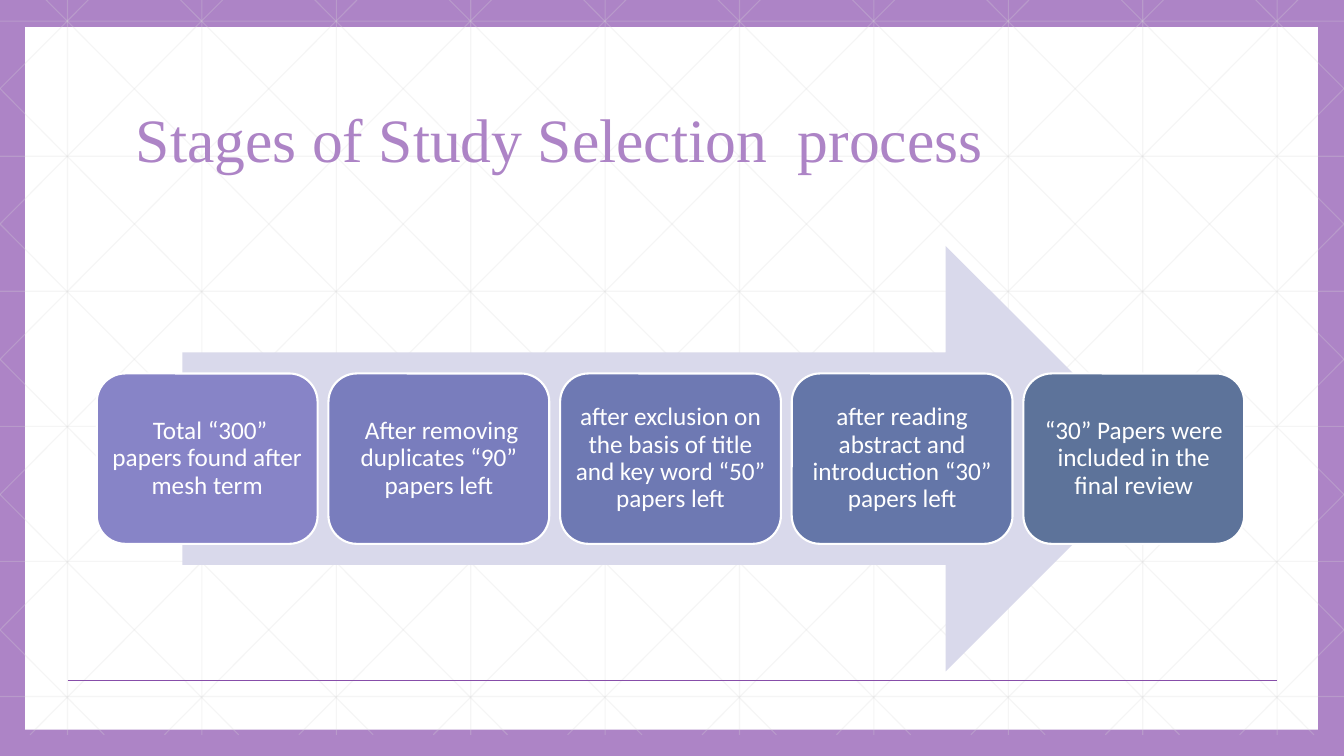
from lxml.etree import SubElement
from pptx import Presentation
from pptx.dml.color import RGBColor
from pptx.enum.shapes import MSO_CONNECTOR, MSO_SHAPE
from pptx.enum.text import MSO_ANCHOR, PP_ALIGN
from pptx.oxml.ns import qn
from pptx.util import Pt

PX = 9144  # 100 px to the inch
WIDTH, HEIGHT = 1333, 750
PURPLE, WHITE = "AD84C6", "FFFFFF"

STAGES = [
    (" Total “300” papers found after mesh term", "8784C7"),
    (" After removing duplicates “90” papers left", "797DBD"),
    ("after exclusion on the basis of title and key word “50” papers left", "6E79B3"),
    ("after reading abstract and introduction “30” papers left", "6476A8"),
    ("“30” Papers were included in the final review", "5D739A"),
]


def emu(*lengths):
    return [round(length * PX) for length in lengths]


def color(hex_string):
    return RGBColor.from_string(hex_string)


def add_block(slide, preset, box, fill, outline=None):
    block = slide.shapes.add_shape(preset, *emu(*box))
    block.shadow.inherit = False
    block.fill.solid()
    block.fill.fore_color.rgb = color(fill)
    if outline:
        block.line.color.rgb = color(outline)
        block.line.width = Pt(1.5)
    else:
        block.line.fill.background()
    return block


def add_rule(slide, start, end, hex_string, weight, opacity=None):
    rule = slide.shapes.add_connector(MSO_CONNECTOR.STRAIGHT, *emu(*start, *end))
    rule.line.color.rgb = color(hex_string)
    rule.line.width = Pt(weight)
    properties = rule._element.spPr
    if opacity:
        tint = properties.find(".//" + qn("a:srgbClr"))
        SubElement(tint, qn("a:alpha"), val=str(opacity * 1000))
    SubElement(properties, qn("a:effectLst"))


def write(holder, text, *, font, size, hex_string, align=PP_ALIGN.LEFT, inset=None):
    frame = holder.text_frame
    frame.word_wrap = True
    frame.vertical_anchor = MSO_ANCHOR.MIDDLE
    if inset is not None:
        (frame.margin_left, frame.margin_top,
         frame.margin_right, frame.margin_bottom) = emu(*[inset] * 4)
    paragraph = frame.paragraphs[0]
    paragraph.alignment = align
    paragraph.line_spacing = 0.9
    run = paragraph.add_run()
    run.text = text
    run.font.name = font
    run.font.size = Pt(size)
    run.font.color.rgb = color(hex_string)


def draw_lattice(slide, box):
    """Faint upright, level and diagonal lines, cut off at the sides of the box."""
    left, top, width, height = box
    right, bottom = left + width, top + height
    step, lean = width / 10, 745

    def faint(start, end):
        add_rule(slide, start, end, "D9D9D9", 0.79, opacity=25)

    for column in range(10):
        x = left + 67 + column * step
        faint((x, top), (x, bottom))
    for row in range(6):
        y = top + 42 + row * 134
        faint((left, y), (right, y))
    for diagonal in range(-5, 10):
        x = left + 25 + diagonal * step
        x1, x2 = max(x, left), min(x + lean, right)
        y1, y2 = [top + (edge - x) * height / lean for edge in (x1, x2)]
        faint((x1, y1), (x2, y2))
        faint((left + right - x1, y1), (left + right - x2, y2))


def draw_background(slide, box):
    left, top, width, height = box
    slide.background.fill.solid()
    slide.background.fill.fore_color.rgb = color(PURPLE)
    # White page inside the purple frame
    add_block(slide, MSO_SHAPE.RECTANGLE,
              (left + 25, top + 27, width - 51, height - 53), WHITE)
    draw_lattice(slide, (left, top - 21, width, height))
    # Footer rule
    add_rule(slide, (left + 67, top + 675), (left + width - 66, top + 675), "874EA9", 1)


def draw_title(slide, box):
    title = slide.shapes.add_textbox(*emu(*box))
    write(title, "Stages of Study Selection  process",
          font="Times New Roman", size=44, hex_string=PURPLE)


def draw_process(slide, box):
    left, top, width, height = box
    # Arrow behind the stages
    add_block(slide, MSO_SHAPE.RIGHT_ARROW, (left + 85, top, width - 170, height), "D9D9EB")
    # Stage cards, equally spaced across the box
    card_width, card_height = 219, 169
    pitch = (width - card_width) / (len(STAGES) - 1)
    card_top = top + (height - card_height) / 2
    for index, (stage, fill) in enumerate(STAGES):
        card = add_block(slide, MSO_SHAPE.ROUNDED_RECTANGLE,
                         (left + index * pitch, card_top, card_width, card_height),
                         fill, outline=WHITE)
        write(card, stage, font="Calibri", size=18, hex_string=WHITE,
              align=PP_ALIGN.CENTER, inset=7)


def main():
    deck = Presentation()
    deck.slide_width, deck.slide_height = emu(WIDTH, HEIGHT)
    slide = deck.slides.add_slide(deck.slide_layouts[6])
    draw_background(slide, (0, 0, WIDTH, HEIGHT))
    draw_title(slide, (125, 67, 1080, 148))
    draw_process(slide, (96, 244, 1138, 422))
    deck.save("out.pptx")


if __name__ == "__main__":
    main()
